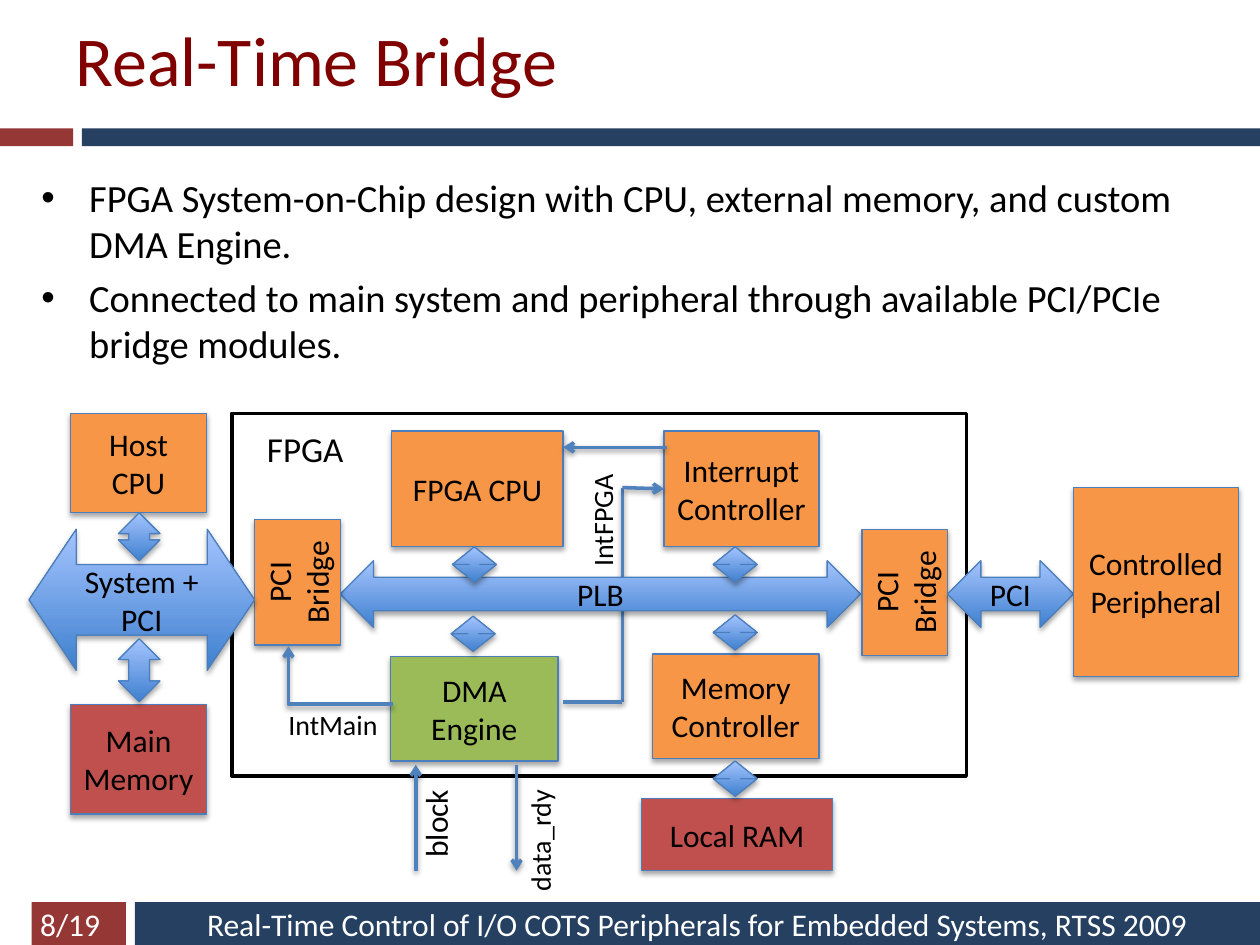
from dataclasses import dataclass

from lxml.etree import SubElement
from pptx import Presentation
from pptx.dml.color import RGBColor
from pptx.enum.shapes import MSO_CONNECTOR as Link, MSO_SHAPE as Shape
from pptx.enum.text import MSO_ANCHOR as Anchor, MSO_AUTO_SIZE as AutoSize, PP_ALIGN as Align
from pptx.oxml.ns import qn
from pptx.util import Inches, Pt


@dataclass(frozen=True)
class Theme:
    font: str = "Calibri"
    title: str = "800000"
    red_bar: str = "953735"
    navy_bar: str = "254061"
    ink: str = "000000"
    paper: str = "FFFFFF"
    logic: str = "F79646"
    memory: str = "C0504D"
    engine: str = "9BBB59"
    edge: str = "4B7EBC"
    wire: str = "4F81BD"
    bus_low: str = "3F80CE"
    bus_high: str = "A4C4FF"
    title_size: int = 40
    bullet_size: int = 22
    frame_size: int = 20
    block_size: int = 18
    signal_size: int = 16


@dataclass(frozen=True)
class Box:
    left: float
    top: float
    width: float
    height: float

    def area(self, left, top, width, height):
        return Box(self.left + left, self.top + top, width, height)

    def point(self, x, y):
        return Inches(self.left + x), Inches(self.top + y)

    def lengths(self):
        return [Inches(n) for n in (self.left, self.top, self.width, self.height)]


THEME = Theme()
SMALL_ARROW = (0.5, 0.245)


def rgb(code):
    return RGBColor.from_string(code)


def write(frame, text, size, color=THEME.ink, align=Align.LEFT):
    frame.text = text
    for para in frame.paragraphs:
        para.alignment = align
        para.font.name = THEME.font
        para.font.size = Pt(size)
        para.font.color.rgb = rgb(color)


def cast_shadow(item, opacity, distance):
    effects = SubElement(item.element.spPr, qn("a:effectLst"))
    shadow = SubElement(effects, qn("a:outerShdw"), blurRad=str(Pt(3.1)),
                        dist=str(Pt(distance)), dir="5400000", rotWithShape="0")
    color = SubElement(shadow, qn("a:srgbClr"), val=THEME.ink)
    SubElement(color, qn("a:alpha"), val=str(opacity * 1000))


def add_bar(page, box, color):
    bar = page.shapes.add_shape(Shape.RECTANGLE, *box.lengths())
    bar.shadow.inherit = False
    bar.fill.solid()
    bar.fill.fore_color.rgb = rgb(color)
    bar.line.fill.background()
    return bar


def finish_shape(shape, text):
    shape.line.color.rgb = rgb(THEME.edge)
    shape.line.width = Pt(0.75)
    cast_shadow(shape, 35, 1.8)
    if text:
        shape.text_frame.word_wrap = True
        shape.text_frame.vertical_anchor = Anchor.MIDDLE
        write(shape.text_frame, text, THEME.block_size, align=Align.CENTER)
    return shape


def add_block(page, box, text, color=THEME.logic, rotation=0):
    block = page.shapes.add_shape(Shape.RECTANGLE, *box.lengths())
    block.rotation = rotation
    block.fill.solid()
    block.fill.fore_color.rgb = rgb(color)
    return finish_shape(block, text)


def add_bus(page, box, text="", kind=Shape.LEFT_RIGHT_ARROW, adjustments=(0.5, 0.5)):
    bus = page.shapes.add_shape(kind, *box.lengths())
    for index, value in enumerate(adjustments):
        bus.adjustments[index] = value
    bus.fill.gradient()
    bus.fill.gradient_angle = 90
    for stop, color in zip(bus.fill.gradient_stops, (THEME.bus_low, THEME.bus_high)):
        stop.color.rgb = rgb(color)
    return finish_shape(bus, text)


def add_wire(page, start, end, arrow=True, kind=Link.STRAIGHT):
    wire = page.shapes.add_connector(kind, *start, *end)
    wire.line.color.rgb = rgb(THEME.wire)
    wire.line.width = Pt(2)
    if arrow:
        SubElement(wire.element.spPr.find(qn("a:ln")), qn("a:tailEnd"), type="arrow")
    cast_shadow(wire, 38, 1.6)
    return wire


def add_label(page, box, text, size, color=THEME.ink, rotation=0):
    label = page.shapes.add_textbox(*box.lengths())
    label.rotation = rotation
    label.text_frame.word_wrap = False
    label.text_frame.auto_size = AutoSize.SHAPE_TO_FIT_TEXT
    write(label.text_frame, text, size, color)


def build_header(page, box):
    add_bar(page, box.area(0, 1.02, 0.58, 0.14), THEME.red_bar)
    add_bar(page, box.area(0.65, 1.02, 9.35, 0.14), THEME.navy_bar)
    title = page.shapes.title
    title.left, title.top, title.width, title.height = box.area(0.5, -0.16, 9, 1.25).lengths()
    title.text_frame.vertical_anchor = Anchor.MIDDLE
    write(title.text_frame, "Real-Time Bridge", THEME.title_size, THEME.title)


def build_footer(page, box):
    add_bar(page, box.area(0.25, 0, 0.75, 0.34), THEME.red_bar)
    banner = add_bar(page, box.area(1.07, 0, 8.93, 0.34), THEME.navy_bar)
    banner.text_frame.vertical_anchor = Anchor.MIDDLE
    write(banner.text_frame,
          "Real-Time Control of I/O COTS Peripherals for Embedded Systems, RTSS 2009",
          THEME.block_size, THEME.paper, Align.CENTER)
    add_label(page, box.area(0.22, -0.03, 0.68, 0.4), "8/19", THEME.block_size, THEME.paper)


def build_bullets(page, box):
    frame = page.shapes.add_textbox(*box.lengths()).text_frame
    frame.word_wrap = True
    frame.text = (
        "FPGA System-on-Chip design with CPU, external memory, and custom DMA Engine.\n"
        "Connected to main system and peripheral through available PCI/PCIe bridge modules.")
    for index, para in enumerate(frame.paragraphs):
        layout = para._p.get_or_add_pPr()
        layout.set("marL", str(Inches(0.38)))
        layout.set("indent", str(Inches(-0.38)))
        SubElement(layout, qn("a:buFont"), typeface="Arial")
        SubElement(layout, qn("a:buChar"), char="•")
        para.space_before = Pt(4.4 if index else 0)
        para.font.name = THEME.font
        para.font.size = Pt(THEME.bullet_size)
        para.font.color.rgb = rgb(THEME.ink)


def build_fpga(page, box):
    frame = add_bar(page, box, THEME.paper)
    frame.line.color.rgb = rgb(THEME.ink)
    frame.line.width = Pt(2)
    add_label(page, box.area(0.18, 0.06, 0.82, 0.44), "FPGA", THEME.frame_size)

    add_wire(page, box.point(3.1, 2.29), box.point(3.1, 0.59), arrow=False)
    add_block(page, box.area(1.27, 0.14, 1.36, 0.92), "FPGA CPU")
    add_bus(page, box.area(0.86, 1.17, 4.13, 0.53), "PLB")
    interrupt = add_block(page, box.area(3.43, 0.14, 1.23, 0.92), "Interrupt\nController")
    add_block(page, box.area(1.26, 1.93, 1.33, 0.83), "DMA Engine", THEME.engine)
    add_block(page, box.area(3.34, 1.91, 1.32, 0.83), "Memory\nController")
    add_block(page, box.area(3.25, 3.06, 1.52, 0.57), "Local RAM", THEME.memory)
    for left, top in ((0.02, 1), (4.84, 1.08)):
        add_block(page, box.area(left, top, 1, 0.68), "PCI Bridge", rotation=270)

    add_wire(page, box.point(2.63, 2.29), box.point(3.1, 2.29), arrow=False)
    add_wire(page, box.point(3.1, 0.59), box.point(3.43, 0.59)).end_connect(interrupt, 1)
    add_wire(page, box.point(3.45, 0.27), box.point(2.63, 0.27))
    add_wire(page, box.point(1.46, 3.63), box.point(1.46, 2.79))
    add_wire(page, box.point(2.26, 2.79), box.point(2.26, 3.63))
    corner = add_wire(page, box.point(1.28, 2.31), box.point(0.45, 1.85), kind=Link.ELBOW)
    corner.element.spPr.find(qn("a:prstGeom")).set("prst", "bentConnector2")

    for text, place, size, rotation in (
            ("IntMain", (0.35, 2.29, 0.92, 0.37), THEME.signal_size, 0),
            ("IntFPGA", (2.47, 0.66, 0.94, 0.37), THEME.signal_size, 270),
            ("block", (1.24, 3.05, 0.75, 0.4), THEME.block_size, 270),
            ("data_rdy", (1.94, 3.2, 1.01, 0.37), THEME.signal_size, 270)):
        add_label(page, box.area(*place), text, size, rotation=rotation)
    for left, top in ((1.75, 1.06), (1.74, 1.61), (3.82, 1.06), (3.82, 1.6), (3.82, 2.76)):
        add_bus(page, box.area(left, top, 0.35, 0.28), kind=Shape.UP_DOWN_ARROW,
                adjustments=SMALL_ARROW)


def build_host(page, box):
    add_bus(page, box.area(0, 0.92, 1.79, 1.12), "System + PCI", adjustments=(0.5, 0.335))
    add_block(page, box.area(0.33, 0, 1.08, 0.79), "Host CPU")
    add_block(page, box.area(0.33, 2.31, 1.08, 0.87), "Main Memory", THEME.memory)
    for top, height in ((0.79, 0.38), (1.79, 0.5)):
        add_bus(page, box.area(0.71, top, 0.33, height), kind=Shape.UP_DOWN_ARROW)


def build_peripheral(page, box):
    add_bus(page, box.area(0, 0.58, 1, 0.53), "PCI")
    add_block(page, box.area(1, 0, 1.31, 1.5), "Controlled\nPeripheral")


def main():
    deck = Presentation()
    deck.slide_width, deck.slide_height = Inches(10), Inches(7.5)
    page = deck.slides.add_slide(deck.slide_layouts[5])
    build_header(page, Box(0, 0, 10, 1.16))
    build_bullets(page, Box(0.23, 1.33, 9.6, 2.18))
    build_fpga(page, Box(1.84, 3.28, 5.83, 2.88))
    build_host(page, Box(0.23, 3.28, 1.79, 3.18))
    build_peripheral(page, Box(7.52, 3.87, 2.31, 1.5))
    build_footer(page, Box(0, 7.16, 10, 0.34))
    deck.save("out.pptx")


if __name__ == "__main__":
    main()
